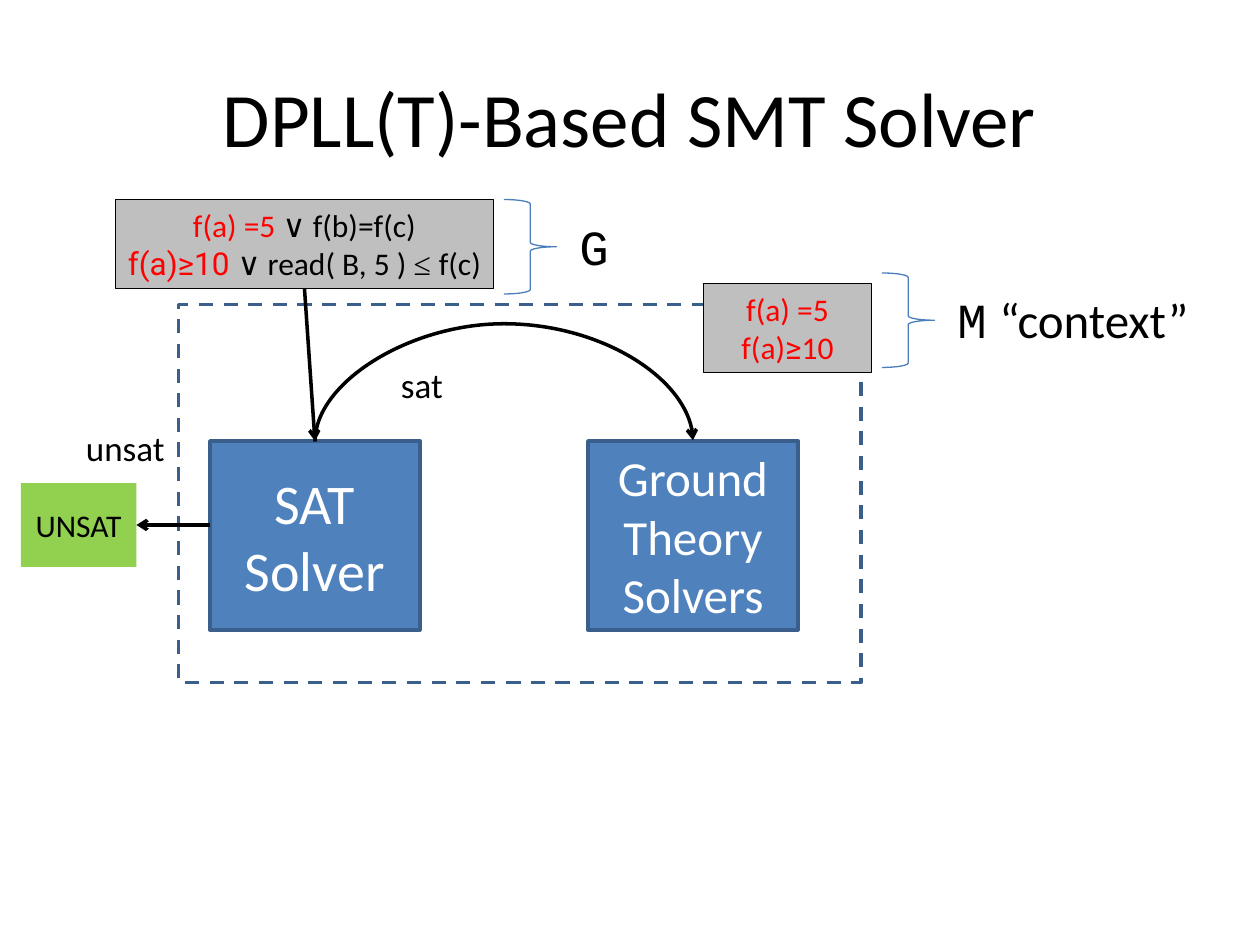
from lxml import etree
from pptx import Presentation
from pptx import util as u
from pptx.dml.color import RGBColor
from pptx.enum import dml, shapes, text
from pptx.oxml import ns

COLORS = {"black": "000000", "white": "FFFFFF", "red": "FF0000", "blue": "4F81BD",
          "edge": "3A5F8C", "brace": "4B7EBC", "grey": "BFBFBF", "green": "92D050"}
CELL = 1 / 12  # the slide is a grid of 120 columns by 90 rows

TITLE = "DPLL(T)-Based SMT Solver"
# A paragraph is a list of runs: (text, font, colour)
CLAUSES = [
    [("f(a) =5", "Calibri", "red"), (" ∨ f(b)=f(c)", "Calibri", "black")],
    [("f(a)≥10 ", "Roboto", "red"), ("∨ read( B, 5 ) ", "Calibri", "black"),
     ("≤ ", "Times New Roman", "black"), ("f(c)", "Calibri", "black")],
]
CONTEXT = [
    [("f(a) =5", "Calibri", "red")],
    [("f(a)", "Calibri", "red"), ("≥", "Roboto", "red"), ("10", "Calibri", "red")],
]
# name: (column, row, columns, rows), paragraphs, format
SOLVER = {"fill": "blue", "line": "edge", "weight": 2}
FORMULA = {"fill": "grey", "line": "black", "weight": 0.75}
BOXES = {
    "frame": ((17, 29, 65, 36), [], {"line": "edge", "weight": 2, "dashed": True}),
    "sat solver": ((20, 42, 20, 18), ["SAT Solver"], {**SOLVER, "size": 32, "color": "white"}),
    "theory solvers": ((56, 42, 20, 18), ["Ground", "Theory Solvers"],
                       {**SOLVER, "size": 28, "color": "white"}),
    "clauses": ((11, 19, 36, 8.5), CLAUSES, {**FORMULA, "anchor": "TOP"}),
    "context": ((67, 27, 16, 8.5), CONTEXT, {**FORMULA, "anchor": "TOP"}),
    "unsat": ((2, 46, 11, 8), ["UNSAT"], {"fill": "green"}),
}
BRACES = [(48, 19, 5, 9), (84, 26, 5, 9)]
LABELS = [
    ((54, 20, 5.4, 6.8), "G", {"size": 28, "font": "Courier New"}),
    ((90, 27, 5.4, 6.8), "M", {"size": 28, "font": "Courier New"}),
    ((94, 27, 21, 6.8), "“context”", {"size": 28}),
    ((7, 40, 10, 5.3), "unsat", {"size": 20, "wrap": False}),
    ((37, 34, 6.5, 5.3), "sat", {"size": 20, "wrap": False}),
]
TOP, BOTTOM, RIGHT = 0, 2, 3


def rgb(name):
    return RGBColor.from_string(COLORS[name])


def grid(*cells):
    return [u.Inches(cell * CELL) for cell in cells]


def write(shape, paragraphs, size=18, font="Calibri", color="black", align="CENTER",
          anchor="MIDDLE", wrap=True):
    frame = shape.text_frame
    frame.word_wrap = wrap
    frame.vertical_anchor = getattr(text.MSO_ANCHOR, anchor)
    for index, runs in enumerate(paragraphs):
        paragraph = frame.add_paragraph() if index else frame.paragraphs[0]
        paragraph.alignment = getattr(text.PP_ALIGN, align)
        if isinstance(runs, str):
            runs = [(runs, font, color)]
        for words, run_font, run_color in runs:
            run = paragraph.add_run()
            run.text = words
            run.font.size, run.font.name = u.Pt(size), run_font
            run.font.color.rgb = rgb(run_color)


def add_shape(slide, kind, cells, fill=None, line=None, weight=0.75, dashed=False):
    shape = slide.shapes.add_shape(kind, *grid(*cells))
    shape.shadow.inherit = False
    if fill:
        shape.fill.solid()
        shape.fill.fore_color.rgb = rgb(fill)
    else:
        shape.fill.background()
    if line:
        shape.line.color.rgb = rgb(line)
        shape.line.width = u.Pt(weight)
    else:
        shape.line.fill.background()
    if dashed:
        shape.line.dash_style = dml.MSO_LINE.DASH
    return shape


def add_box(slide, cells, paragraphs, fill=None, line=None, weight=0.75, dashed=False,
            **text_format):
    box = add_shape(slide, shapes.MSO_SHAPE.RECTANGLE, cells, fill, line, weight, dashed)
    write(box, paragraphs, **text_format)
    return box


def add_arrow(slide, kind, start=(0, 0)):
    arrow = slide.shapes.add_connector(kind, *grid(*start), *grid(*start))
    arrow.line.color.rgb = rgb("black")
    arrow.line.width = u.Pt(2)
    etree.SubElement(arrow.line._get_or_add_ln(), ns.qn("a:tailEnd"), type="arrow")
    etree.SubElement(arrow._element.spPr, ns.qn("a:effectLst"))
    return arrow


def bend_over(arrow, left, right, row, rise):
    """Turn a curved connector into an arch between two points on one row."""
    thickness = 0.12
    span = right - left
    arrow.left, arrow.top, arrow.width, arrow.height = grid(
        (left + right - thickness) / 2, row - span / 2, thickness, span)
    properties = arrow._element.spPr
    for name, value in (("rot", "5400000"), ("flipH", "1"), ("flipV", "1")):
        properties.find(ns.qn("a:xfrm")).set(name, value)
    adjustments = properties.find(ns.qn("a:prstGeom")).find(ns.qn("a:avLst"))
    etree.SubElement(adjustments, ns.qn("a:gd"), name="adj1",
                     fmla=f"val {round(rise / thickness * 100000)}")


def main():
    presentation = Presentation()
    presentation.slide_width, presentation.slide_height = grid(120, 90)
    slide = presentation.slides.add_slide(presentation.slide_layouts[5])

    title = slide.shapes.title
    title.left, title.top, title.width, title.height = grid(6, 3.6, 108, 15)
    write(title, [TITLE], size=44)

    boxes = {name: add_box(slide, cells, paragraphs, **style)
             for name, (cells, paragraphs, style) in BOXES.items()}
    for cells in BRACES:
        add_shape(slide, shapes.MSO_SHAPE.RIGHT_BRACE, cells, line="brace")
    for cells, words, style in LABELS:
        label = slide.shapes.add_textbox(*grid(*cells))
        write(label, [words], align="LEFT", anchor="TOP", **style)

    straight, curve = shapes.MSO_CONNECTOR.STRAIGHT, shapes.MSO_CONNECTOR.CURVE
    input_arrow = add_arrow(slide, straight)
    input_arrow.begin_connect(boxes["clauses"], BOTTOM)
    input_arrow.end_connect(boxes["sat solver"], TOP)

    unsat_arrow = add_arrow(slide, straight, start=(20, 50))
    unsat_arrow.end_connect(boxes["unsat"], RIGHT)

    sat_arrow = add_arrow(slide, curve)
    sat_arrow.begin_connect(boxes["sat solver"], TOP)
    sat_arrow.end_connect(boxes["theory solvers"], TOP)
    bend_over(sat_arrow, left=30, right=66, row=42, rise=11.4)

    presentation.save("out.pptx")


if __name__ == "__main__":
    main()
